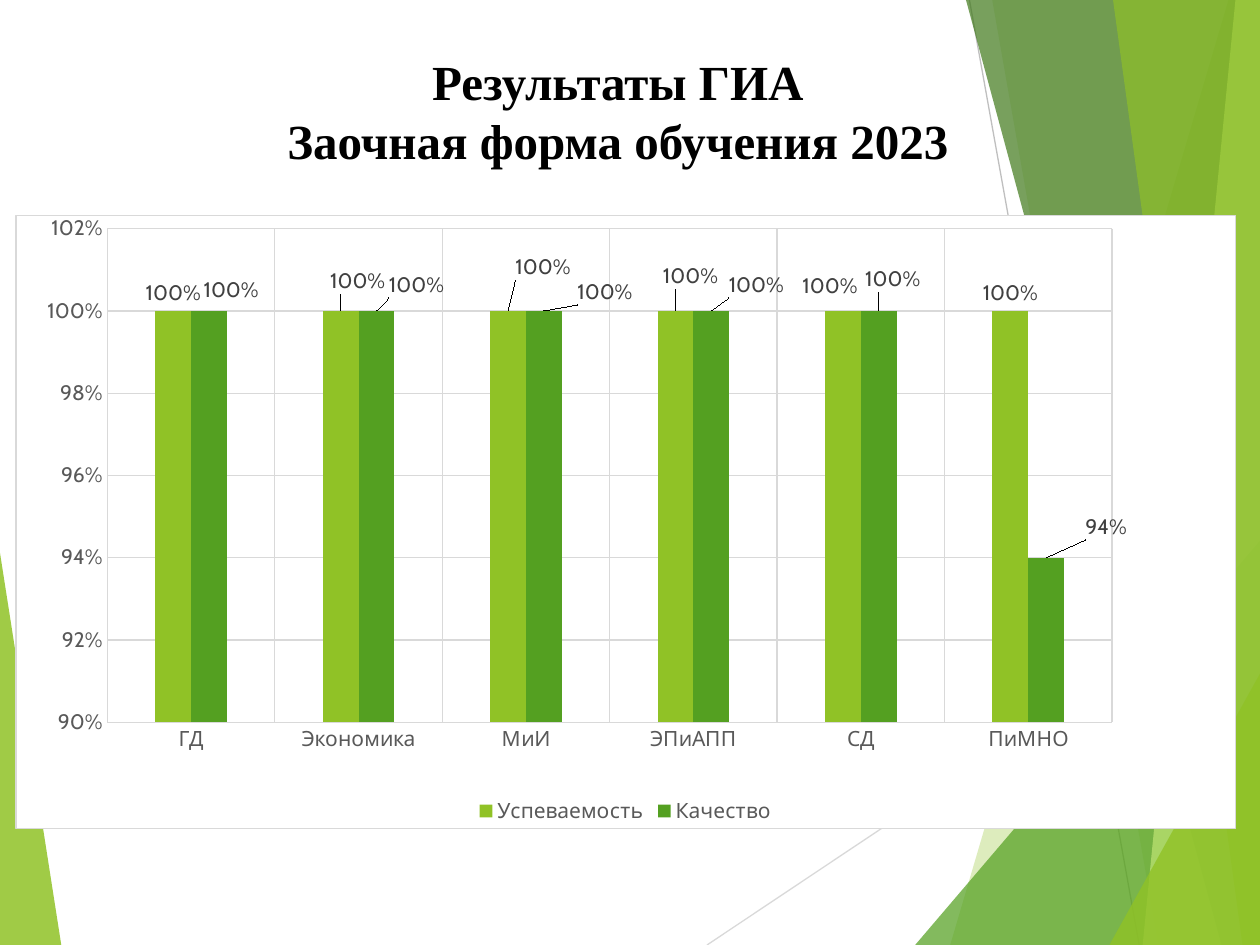
from dataclasses import dataclass

from lxml.etree import SubElement
from pptx import Presentation
from pptx.chart.data import CategoryChartData
from pptx.dml.color import RGBColor
from pptx.enum.chart import XL_CHART_TYPE as ChartType
from pptx.enum.chart import XL_LABEL_POSITION as LabelPos
from pptx.enum.chart import XL_LEGEND_POSITION as LegendPos
from pptx.enum.chart import XL_TICK_MARK as Tick
from pptx.enum.shapes import MSO_CONNECTOR as Connector
from pptx.enum.text import PP_ALIGN as Align
from pptx.oxml import parse_xml
from pptx.oxml.ns import nsdecls, qn
from pptx.util import Pt


@dataclass(frozen=True)
class Theme:
    lime: str = "90C226"
    green: str = "54A021"
    forest: str = "3F7819"
    pale: str = "C0E474"
    white: str = "FFFFFF"
    black: str = "000000"
    grid: str = "D9D9D9"
    ray: str = "BFBFBF"
    axis: str = "595959"
    label: str = "404040"
    title_font: str = "Times New Roman"
    chart_font: str = "Cabin"
    title_size: float = 28
    base_size: float = 10
    chart_size: float = 12
    hairline: float = 0.75


T = Theme()
W, H = 720, 540

CATEGORIES = ["ГД", "Экономика", "МиИ", "ЭПиАПП", "СД", "ПиМНО"]
# Name, colour, values, label shifts in points by point index
SERIES = [
    ("Успеваемость", T.lime, [1, 1, 1, 1, 1, 1],
     {1: (9.7, -6.9), 2: (20, -14.9), 3: (8.6, -9.7), 4: (-7.4, -4)}),
    ("Качество", T.green, [1, 1, 1, 1, 1, 0.94],
     {0: (12.6, -1.7), 1: (22.9, -4.6), 2: (34.9, -0.6),
      3: (25.7, -4.6), 4: (8, -8), 5: (34.3, -7.4)}),
]


def rgb(value):
    return RGBColor.from_string(value)


def style_font(font, size, color, name):
    font.size, font.name = Pt(size), name
    font.color.rgb = rgb(color)


def style_line(line, color):
    line.color.rgb = rgb(color)
    line.width = Pt(T.hairline)


def add_facet(s, points, color, opacity):
    builder = s.shapes.build_freeform(*points[0], scale=Pt(1))
    builder.add_line_segments(points[1:], close=True)
    sp = builder.convert_to_shape()
    sp.shadow.inherit = False
    sp.fill.solid()
    sp.fill.fore_color.rgb = rgb(color)
    sp.line.fill.background()
    clr = sp.fill._xPr.find(".//" + qn("a:srgbClr"))
    SubElement(clr, qn("a:alpha")).set("val", str(opacity * 1000))


def add_ray(s, start, end, color):
    ray = s.shapes.add_connector(Connector.STRAIGHT, *map(Pt, start + end))
    style_line(ray.line, color)
    SubElement(ray._element.spPr, qn("a:effectLst"))


def add_backdrop(s, left, top, width, height):
    right, bottom = left + width, top + height
    add_facet(s, [(left, top + 316), (left + 35, bottom), (left, bottom)], T.lime, 85)
    add_ray(s, (left + 404, bottom), (right, top + 329), T.grid)
    add_ray(s, (left + 554, top), (left + 651, bottom), T.ray)

    # Right-hand facets: top edge x, bottom edge x, colour, opacity;
    # a top edge of None makes a corner triangle rising to the given height
    facets = [
        (702, 543, T.lime, 30, None),
        (567, 662, T.lime, 20, None),
        (None, 523, T.green, 72, 309),
        (552, 698, T.forest, 70, None),
        (706, 653, T.pale, 70, None),
        (636, 710, T.lime, 65, None),
        (None, 634, T.lime, 80, 385),
    ]
    for top_x, bottom_x, color, opacity, rise in facets:
        points = [(left + bottom_x, bottom), (right, bottom)]
        if top_x is None:
            points += [(right, top + rise)]
        else:
            points += [(right, top), (left + top_x, top)]
        add_facet(s, points, color, opacity)


def add_title(s, left, top, width, height):
    tf = s.shapes.add_textbox(*map(Pt, (left, top, width, height))).text_frame
    tf.word_wrap = True
    for i, line in enumerate(["Результаты ГИА", "Заочная форма обучения 2023"]):
        p = tf.paragraphs[0] if i == 0 else tf.add_paragraph()
        p.alignment = Align.CENTER
        r = p.add_run()
        r.text = line
        r.font.bold = True
        style_font(r.font, T.title_size, T.black, T.title_font)


def area_format(border):
    line = "<a:noFill/>"
    if border:
        line = f'<a:solidFill><a:srgbClr val="{border}"/></a:solidFill>'
    return parse_xml(
        f'<c:spPr {nsdecls("c", "a")}><a:solidFill><a:srgbClr val="{T.white}"/>'
        f'</a:solidFill><a:ln w="{Pt(T.hairline)}">{line}</a:ln></c:spPr>')


def manual_layout(inner=False, **values):
    layout = parse_xml(f'<c:layout {nsdecls("c")}><c:manualLayout/></c:layout>')
    tags = [("xMode", "edge"), ("yMode", "edge")] if inner else []
    if inner:
        tags.insert(0, ("layoutTarget", "inner"))
    for tag, value in tags + list(values.items()):
        SubElement(layout[0], qn("c:" + tag)).set("val", str(value))
    return layout


def style_axis(axis):
    axis.major_tick_mark = axis.minor_tick_mark = Tick.NONE
    axis.has_major_gridlines = True
    style_line(axis.major_gridlines.format.line, T.grid)
    style_font(axis.tick_labels.font, T.chart_size, T.axis, T.chart_font)


def add_results_chart(s, left, top, width, height):
    data = CategoryChartData(number_format="0%")
    data.categories = CATEGORIES
    for name, _, values, _ in SERIES:
        data.add_series(name, values)
    chart = s.shapes.add_chart(ChartType.COLUMN_CLUSTERED,
                               *map(Pt, (left, top, width, height)), data).chart
    chart.has_title = False
    style_font(chart.font, T.base_size, T.black, T.chart_font)

    # Axes
    style_axis(chart.category_axis)
    style_line(chart.category_axis.format.line, T.grid)
    val = chart.value_axis
    style_axis(val)
    val.format.line.fill.background()
    val.minimum_scale, val.maximum_scale, val.major_unit = 0.9, 1.02, 0.02
    val.tick_labels.number_format = "0%"
    val.tick_labels.number_format_is_linked = False

    # Legend
    chart.has_legend = True
    chart.legend.position = LegendPos.BOTTOM
    chart.legend.include_in_layout = False
    style_font(chart.legend.font, T.chart_size, T.axis, T.chart_font)

    # Columns and their labels
    plot = chart.plots[0]
    plot.gap_width, plot.overlap, plot.vary_by_categories = 267, 0, False
    for series, (_, color, _, shifts) in zip(plot.series, SERIES):
        series.format.fill.solid()
        series.format.fill.fore_color.rgb = rgb(color)
        labels = series.data_labels
        labels.show_value = True
        labels.number_format, labels.number_format_is_linked = "0%", False
        labels.position = LabelPos.OUTSIDE_END
        style_font(labels.font, T.chart_size, T.label, T.chart_font)
        for i, (dx, dy) in shifts.items():
            label = series.points[i].data_label
            label.position = LabelPos.OUTSIDE_END
            style_font(label.font, T.chart_size, T.label, T.chart_font)
            idx = labels._element.xpath(f'c:dLbl/c:idx[@val="{i}"]')[0]
            idx.addnext(manual_layout(x=dx / width, y=dy / height))

    # Plot area and chart frame
    area = chart._chartSpace.chart.plotArea
    for old in area.findall(qn("c:layout")):
        area.remove(old)
    area.insert(0, manual_layout(True, x=0.075, y=0.022, w=0.824, h=0.805))
    area.append(area_format(None))
    chart._chartSpace.chart.addnext(area_format(T.grid))


def main():
    prs = Presentation()
    prs.slide_width, prs.slide_height = Pt(W), Pt(H)
    s = prs.slides.add_slide(prs.slide_layouts[6])
    add_backdrop(s, 0, 0, W, H)
    add_title(s, 64, 26, 578, 114)
    add_results_chart(s, 8.8, 122.6, 697.4, 351.2)
    prs.save("out.pptx")


if __name__ == "__main__":
    main()
